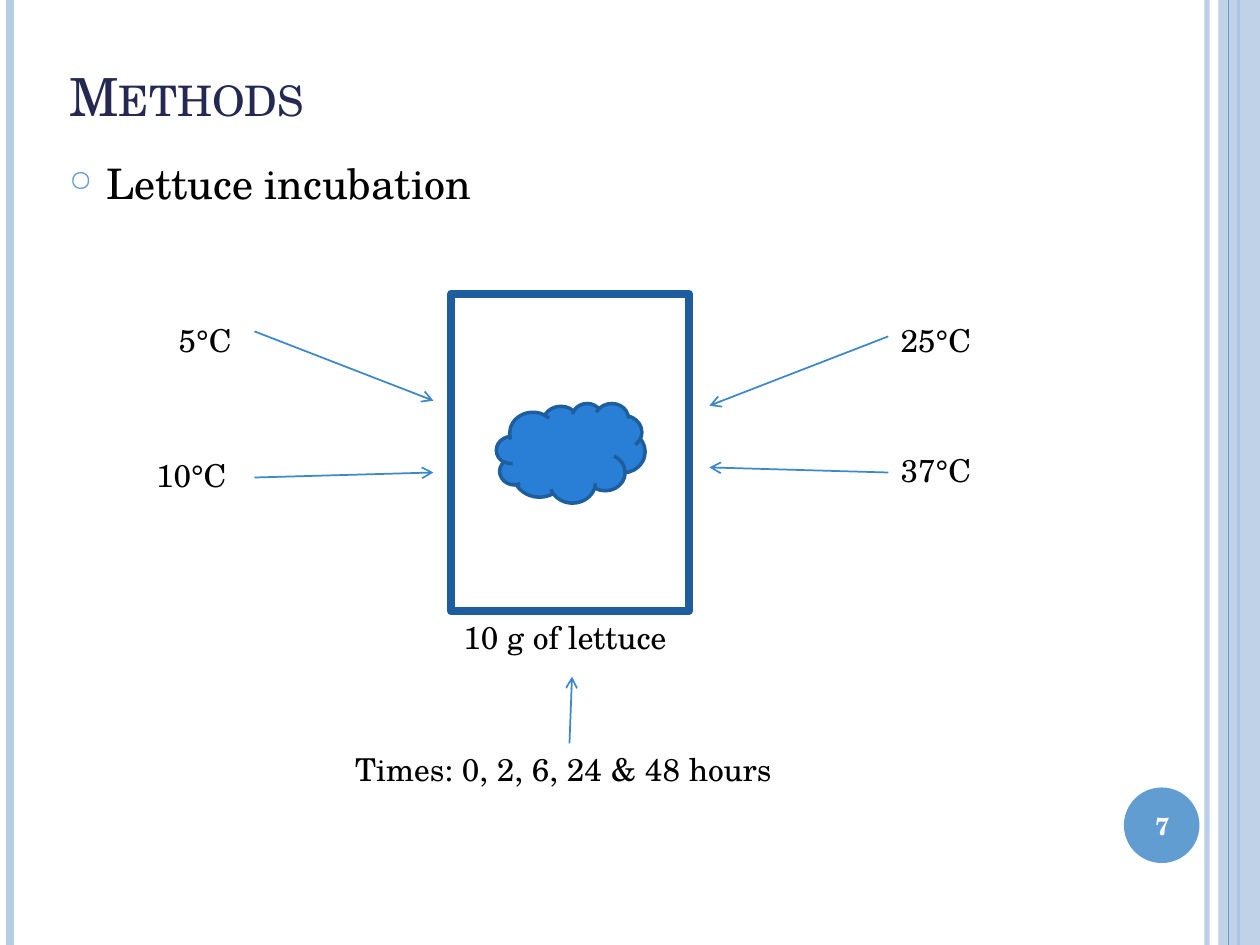
import pptx
import pptx.util
import pptx.dml.color
import pptx.enum.shapes
import pptx.enum.text
import pptx.oxml
import pptx.oxml.ns
import lxml.etree

Inches = pptx.util.Inches
Pt = pptx.util.Pt
SHAPE = pptx.enum.shapes.MSO_SHAPE
ANCHOR = pptx.enum.text.MSO_ANCHOR
ALIGN = pptx.enum.text.PP_ALIGN
qn = pptx.oxml.ns.qn


def color(value):
    return pptx.dml.color.RGBColor.from_string(value)


class SlideBuilder:
    """Draws styled elements on the current slide."""

    font = "TeX Gyre Schola"
    navy, black, white = "242852", "000000", "FFFFFF"
    pale, sky, arrow_blue = "B7CCE5", "629DD1", "3C88CB"
    blue, dark_blue = "297FD5", "1E5E9E"

    def __init__(self, slide):
        self.slide = slide

    def fill_text(self, box, text, size, ink, bold=False, align=ALIGN.LEFT, anchor=ANCHOR.TOP):
        frame = box.text_frame
        frame.word_wrap = True
        frame.vertical_anchor = anchor
        para = frame.paragraphs[0]
        para.alignment = align
        para.add_run().text = text
        para.font.name = self.font
        para.font.size = Pt(size)
        para.font.bold = bold
        para.font.color.rgb = color(ink)
        return para

    def title(self, text, left, top, width, height):
        box = self.slide.shapes.title
        box.left, box.top = Inches(left), Inches(top)
        box.width, box.height = Inches(width), Inches(height)
        para = self.fill_text(box, text, 30, self.navy, anchor=ANCHOR.BOTTOM)
        para.runs[0].font._element.set("cap", "small")

    def text(self, text, left, top, width, height=0.4, size=18, ink=black, **style):
        box = self.slide.shapes.add_textbox(
            Inches(left), Inches(top), Inches(width), Inches(height))
        return self.fill_text(box, text, size, ink, **style)

    def bullet(self, text, left, top, width, height):
        para = self.text(text, left, top, width, height, size=24)
        para.space_before = Pt(6)
        properties = para._p.get_or_add_pPr()
        properties.set("marL", str(Inches(0.3)))
        properties.set("indent", str(Inches(-0.3)))
        defaults = properties.find(qn("a:defRPr"))
        tint = lxml.etree.Element(qn("a:buClr"))
        lxml.etree.SubElement(tint, qn("a:srgbClr"), val=self.sky)
        size = lxml.etree.Element(qn("a:buSzPct"), val="70000")
        mark = lxml.etree.Element(qn("a:buChar"), char="○")
        for element in (tint, size, mark):
            defaults.addprevious(element)

    def shape(self, kind, left, top, width, height, fill=None, line=None, weight=1, opacity=100):
        shape = self.slide.shapes.add_shape(
            kind, Inches(left), Inches(top), Inches(width), Inches(height))
        shape.shadow.inherit = False
        if fill:
            shape.fill.solid()
            shape.fill.fore_color.rgb = color(fill)
            self.fade(shape.fill._xPr, opacity)
        else:
            shape.fill.background()
        if line:
            shape.line.color.rgb = color(line)
            shape.line.width = Pt(weight)
            lxml.etree.SubElement(shape.line._ln, qn("a:round"))
        else:
            shape.line.fill.background()

    def line(self, start, end, ink, weight, opacity=100, arrow=False):
        connector = self.slide.shapes.add_connector(
            pptx.enum.shapes.MSO_CONNECTOR.STRAIGHT, *map(Inches, start + end))
        connector.line.color.rgb = color(ink)
        connector.line.width = Pt(weight)
        self.fade(connector.line._ln, opacity)
        if arrow:
            lxml.etree.SubElement(connector.line._ln, qn("a:tailEnd"), type="arrow")
        lxml.etree.SubElement(connector._element.spPr, qn("a:effectLst"))

    def fade(self, parent, opacity):
        if opacity < 100:
            tint = parent.find(qn("a:solidFill")).find(qn("a:srgbClr"))
            lxml.etree.SubElement(tint, qn("a:alpha"), val=str(opacity * 1000))

    def vertical(self, x, ink, weight, opacity=100):
        self.line((x, 0), (x, 7.5), ink, weight, opacity)

    def arrow(self, start, end):
        self.line(start, end, self.arrow_blue, 1, arrow=True)


def main():
    deck = pptx.Presentation()
    deck.slide_width, deck.slide_height = Inches(10), Inches(7.5)
    page = SlideBuilder(deck.slides.add_slide(deck.slide_layouts[5]))

    page.vertical(9.58, page.pale, 3, 93)
    page.vertical(0.08, page.pale, 4.5)
    page.vertical(9.83, page.sky, 1.5)
    page.shape(SHAPE.RECTANGLE, 9.67, 0, 0.33, 7.5, fill=page.pale, opacity=87)
    page.vertical(9.75, page.sky, 0.75)
    page.shape(SHAPE.OVAL, 8.92, 6.25, 0.6, 0.6, fill=page.sky)
    page.text("7", 8.89, 6.27, 0.67, 0.57, size=14, ink=page.white, bold=True,
              align=ALIGN.CENTER, anchor=ANCHOR.MIDDLE)

    page.title("Methods", 0.45, -0.19, 8.17, 1.25)
    page.bullet("Lettuce incubation", 0.45, 1.2, 8.17, 5.33)

    page.shape(SHAPE.RECTANGLE, 3.58, 2.33, 1.89, 2.52, line=page.dark_blue, weight=4.5)
    page.shape(SHAPE.CLOUD, 3.94, 3.2, 1.18, 0.79,
               fill=page.blue, line=page.dark_blue, weight=2)
    page.text("10 g of lettuce", 3.58, 4.86, 1.89)

    temperatures = [
        ("5°C", 1.32, 2.5, 0.71, (2.02, 2.63), (3.44, 3.18)),
        ("10°C", 1.14, 3.57, 0.88, (2.02, 3.79), (3.44, 3.75)),
        ("25°C", 7.05, 2.5, 0.88, (7.05, 2.67), (5.63, 3.22)),
        ("37°C", 7.05, 3.53, 0.88, (7.05, 3.75), (5.63, 3.71)),
    ]
    for label, left, top, width, start, end in temperatures:
        page.text(label, left, top, width)
        page.arrow(start, end)

    page.text("Times: 0, 2, 6, 24 & 48 hours", 2.72, 5.9, 3.62)
    page.arrow((4.52, 5.9), (4.54, 5.37))
    deck.save("out.pptx")


if __name__ == "__main__":
    main()
